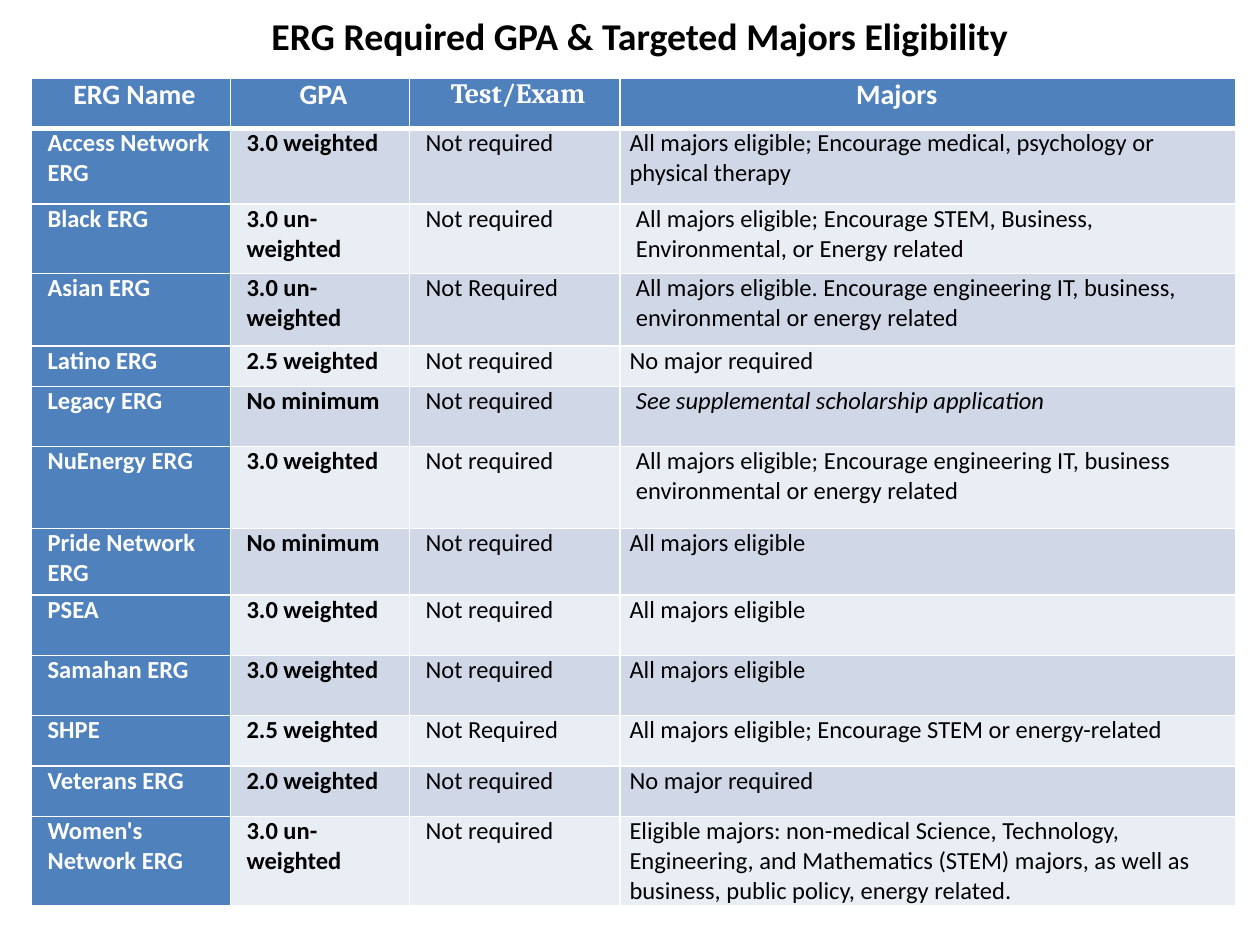
from lxml import etree
from pptx import Presentation, util as u
from pptx.dml.color import RGBColor
from pptx.enum import text
from pptx.oxml import ns

COLORS = {"header": "4F81BD", "odd": "D0D8E8", "even": "E9EDF4",
          "white": "FFFFFF", "black": "000000"}
COLUMN_WIDTHS = [4.01, 3.61, 4.24, 12.42]
INDENT = 0.13
MAJORS_HEADER_INDENT = 4.57
INDENTED_MAJORS = ("Black ERG", "Asian ERG", "Legacy ERG", "NuEnergy ERG")

# Row height in cm, then the four cell texts
ROWS = [
    (1.02, "ERG Name", "GPA", "Test/Exam", "Majors"),
    (1.52, "Access Network ERG", "3.0 weighted", "Not required",
     "All majors eligible; Encourage medical, psychology or physical therapy"),
    (1.40, "Black ERG", "3.0 un-weighted", "Not required",
     "All majors eligible; Encourage STEM, Business, Environmental, or Energy related"),
    (1.47, "Asian ERG", "3.0 un-weighted", "Not Required",
     "All majors eligible. Encourage engineering IT, business, environmental or energy related"),
    (0.81, "Latino ERG", "2.5 weighted", "Not required", "No major required"),
    (1.21, "Legacy ERG", "No minimum", "Not required",
     "See supplemental scholarship application"),
    (1.65, "NuEnergy ERG", "3.0 weighted", "Not required",
     "All majors eligible; Encourage engineering IT, business environmental or energy related"),
    (1.35, "Pride Network ERG", "No minimum", "Not required", "All majors eligible"),
    (1.21, "PSEA", "3.0 weighted", "Not required", "All majors eligible"),
    (1.21, "Samahan ERG", "3.0 weighted", "Not required", "All majors eligible"),
    (1.02, "SHPE", "2.5 weighted", "Not Required",
     "All majors eligible; Encourage STEM or energy-related"),
    (1.02, "Veterans ERG", "2.0 weighted", "Not required", "No major required"),
    (1.80, "Women's Network ERG", "3.0 un-weighted", "Not required",
     "Eligible majors: non-medical Science, Technology, Engineering, and Mathematics "
     "(STEM) majors, as well as business, public policy, energy related."),
]


def add_run(paragraph, words, size, color, bold, font="Calibri"):
    run = paragraph.add_run()
    run.text = words
    run.font.name = font
    run.font.size = u.Pt(size)
    run.font.bold = bold
    run.font.color.rgb = RGBColor.from_string(COLORS[color])
    return run


def set_borders(cell, top, bottom):
    properties = cell._tc.get_or_add_tcPr()
    widths = {"a:lnL": 1, "a:lnR": 1, "a:lnT": top, "a:lnB": bottom}
    for position, (side, width) in enumerate(widths.items()):
        line = etree.Element(ns.qn(side), w=str(u.Pt(width)))
        fill = etree.SubElement(line, ns.qn("a:solidFill"))
        etree.SubElement(fill, ns.qn("a:srgbClr"), val=COLORS["white"])
        properties.insert(position, line)


presentation = Presentation()
presentation.slide_width = u.Cm(25.4)
presentation.slide_height = u.Cm(19.05)
slide = presentation.slides.add_slide(presentation.slide_layouts[6])

# Table
table = slide.shapes.add_table(
    len(ROWS), len(COLUMN_WIDTHS), u.Cm(0.64), u.Cm(1.57),
    u.Cm(sum(COLUMN_WIDTHS)), u.Cm(sum(row[0] for row in ROWS))).table
for column, width in zip(table.columns, COLUMN_WIDTHS):
    column.width = u.Cm(width)

for row_index, (height, *texts) in enumerate(ROWS):
    table.rows[row_index].height = u.Cm(height)
    is_header = row_index == 0
    for column_index, words in enumerate(texts):
        is_label = is_header or column_index == 0
        is_majors = column_index == 3

        # Cell fill, margins and borders
        cell = table.cell(row_index, column_index)
        cell.margin_left = cell.margin_right = u.Cm(0.19)
        cell.margin_top = cell.margin_bottom = 0
        cell.fill.solid()
        band = "header" if is_label else ("even", "odd")[row_index % 2]
        cell.fill.fore_color.rgb = RGBColor.from_string(COLORS[band])
        set_borders(cell, top=3 if row_index == 1 else 1, bottom=3 if is_header else 1)

        # Cell text
        paragraph = cell.text_frame.paragraphs[0]
        indent = INDENT
        if is_majors and is_header:
            indent = MAJORS_HEADER_INDENT
        elif is_majors and texts[0] not in INDENTED_MAJORS:
            indent = 0
        paragraph._p.get_or_add_pPr().set("marL", str(u.Cm(indent)))
        centered = is_header and not is_majors
        paragraph.alignment = text.PP_ALIGN.CENTER if centered else text.PP_ALIGN.LEFT
        run = add_run(paragraph, words, 16 if is_header else 14,
                      "white" if is_label else "black",
                      is_header or column_index < 2,
                      "Cambria" if is_header and column_index == 2 else "Calibri")
        run.font.italic = words.startswith("See supplemental")

# Title
title = slide.shapes.add_textbox(u.Cm(1.47), u.Cm(0.25), u.Cm(22.86), u.Cm(1.3))
frame = title.text_frame
frame.word_wrap = True
frame.margin_top = frame.margin_bottom = 0
frame.vertical_anchor = text.MSO_ANCHOR.TOP
paragraph = frame.paragraphs[0]
paragraph.alignment = text.PP_ALIGN.CENTER
add_run(paragraph, "ERG Required GPA & Targeted Majors Eligibility", 21.6, "black", True)

presentation.save("out.pptx")
